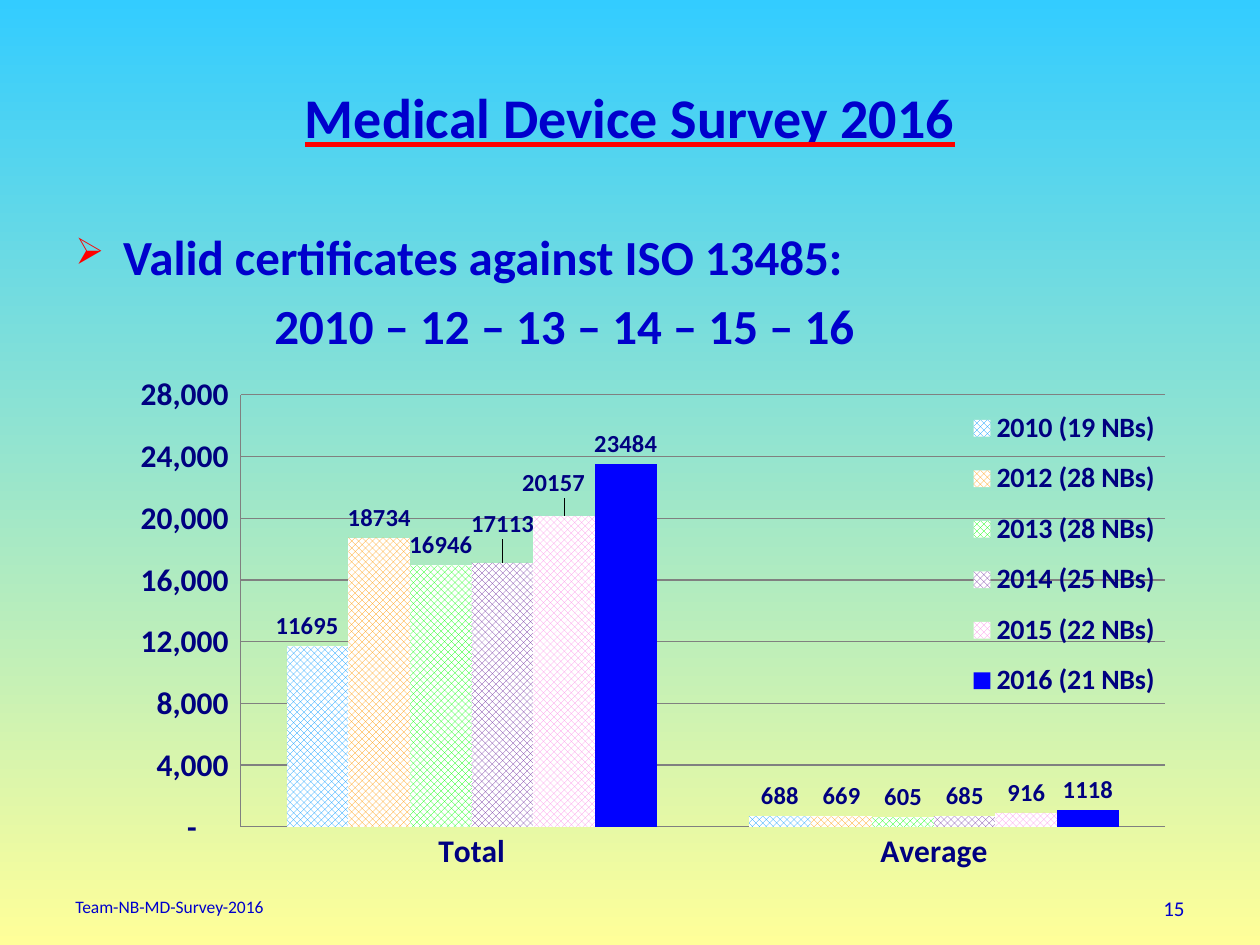
from lxml import etree
from pptx import Presentation
from pptx.chart.data import CategoryChartData as ChartData
from pptx.dml.color import RGBColor as Rgb
from pptx.enum.chart import XL_CHART_TYPE as Kind, XL_LABEL_POSITION as Spot
from pptx.enum.chart import XL_LEGEND_POSITION as Side, XL_TICK_MARK as Tick
from pptx.enum.dml import MSO_PATTERN as Pattern
from pptx.enum.text import MSO_ANCHOR as Anchor, PP_ALIGN as Align
from pptx.oxml import parse_xml
from pptx.oxml.ns import nsdecls, qn
from pptx.util import Inches, Pt

COLORS = {
    "sky": "33CCFF", "sand": "FFFF99", "text": "0000CC", "red": "FF0000",
    "navy": "000080", "white": "FFFFFF", "grid": "808080", "solid": "0101FF",
}
FACE = "Calibri"
SERIES = [
    ("2010 (19 NBs)", (11695, 688), "0099FF"),
    ("2012 (28 NBs)", (18734, 669), "FF9900"),
    ("2013 (28 NBs)", (16946, 605), "00FF00"),
    ("2014 (25 NBs)", (17113, 685), "7030A0"),
    ("2015 (22 NBs)", (20157, 916), "FD91E8"),
    ("2016 (21 NBs)", (23484, 1118), None),
]
SHIFTS = {0: (-0.01, 0), 3: (0, -0.03), 4: (-0.01, -0.02)}


def rgb(name):
    return Rgb.from_string(COLORS.get(name, name))


def style(font, size, color, bold=False):
    font.name = FACE
    font.size = Pt(size)
    font.bold = bold
    font.color.rgb = rgb(color)


def add_box(slide, left, top, width, height):
    box = slide.shapes.add_textbox(*map(Inches, (left, top, width, height)))
    box.text_frame.word_wrap = True
    return box.text_frame


def add_run(para, text, size, bold=False):
    run = para.add_run()
    run.text = text
    style(run.font, size, "text", bold)
    return run


def set_back(slide):
    fill = slide.background.fill
    fill.gradient()
    fill.gradient_angle = 270
    for stop, name in zip(fill.gradient_stops, ("sky", "sand")):
        stop.color.rgb = rgb(name)


def add_title(slide):
    frame = add_box(slide, 0.5, 0.3, 9, 1.25)
    frame.vertical_anchor = Anchor.MIDDLE
    para = frame.paragraphs[0]
    para.alignment = Align.CENTER
    run = add_run(para, "Medical Device Survey 2016", 32, True)
    run.font.underline = True
    line = parse_xml(
        f'<a:uFill {nsdecls("a")}><a:solidFill>'
        f'<a:srgbClr val="{COLORS["red"]}"/></a:solidFill></a:uFill>')
    run.font._element.find(qn("a:latin")).addprevious(line)


def add_bullet(para):
    props = para._p.get_or_add_pPr()
    props.set("marL", str(Inches(0.38)))
    props.set("indent", str(Inches(-0.38)))
    color = etree.SubElement(props, qn("a:buClr"))
    etree.SubElement(color, qn("a:srgbClr"), val=COLORS["red"])
    etree.SubElement(props, qn("a:buSzPct"), val="75000")
    etree.SubElement(props, qn("a:buChar"), char="➢")


def add_body(slide):
    frame = add_box(slide, 0.5, 1.75, 9, 1.16)
    head = frame.paragraphs[0]
    add_bullet(head)
    add_run(head, "Valid certificates against ISO 13485:", 28, True)
    years = frame.add_paragraph()
    years._p.get_or_add_pPr().set("marL", str(Inches(1.58)))
    years.space_before = Pt(5.6)
    add_run(years, "2010 – 12 – 13 – 14 – 15 – 16", 28, True)


def add_note(slide, text, left, width, size, align):
    para = add_box(slide, left, 7.06, width, 0.29).paragraphs[0]
    para.alignment = align
    add_run(para, text, size)


def make_layout(x, y, w=None, h=None, inner=False):
    parts = ['<c:layoutTarget val="inner"/>'] if inner else []
    if w:
        parts += ['<c:xMode val="edge"/>', '<c:yMode val="edge"/>']
    sizes = (("x", x), ("y", y), ("w", w), ("h", h))
    parts += [f'<c:{key} val="{val}"/>' for key, val in sizes if val is not None]
    return parse_xml(
        f'<c:layout {nsdecls("c")}><c:manualLayout>{"".join(parts)}'
        '</c:manualLayout></c:layout>')


def place(parent, layout, index):
    for old in parent.findall(qn("c:layout")):
        parent.remove(old)
    parent.insert(index, layout)


def style_axis(axis):
    axis.major_tick_mark = axis.minor_tick_mark = Tick.NONE
    axis.format.line.color.rgb = rgb("grid")
    style(axis.tick_labels.font, 18, "navy", True)


def style_bars(bars, color):
    fill = bars.format.fill
    if color:
        fill.patterned()
        fill.pattern = Pattern.LARGE_CHECKER_BOARD
        fill.fore_color.rgb = rgb(color)
        fill.back_color.rgb = rgb("white")
    else:
        fill.solid()
        fill.fore_color.rgb = rgb("solid")
    bars.invert_if_negative = False
    labels = bars.data_labels
    labels.show_value = True
    labels.position = Spot.OUTSIDE_END
    labels.number_format = "0"
    labels.number_format_is_linked = False
    style(labels.font, 14, "navy", True)


def shift_label(bars, x, y):
    label = bars.points[0].data_label
    label.position = Spot.OUTSIDE_END
    style(label.font, 14, "navy", True)
    place(bars.data_labels._element.find(qn("c:dLbl")), make_layout(x, y), 1)


def add_chart(slide):
    data = ChartData(number_format="0")
    data.categories = ["Total", "Average"]
    for name, vals, _ in SERIES:
        data.add_series(name, vals)
    area = map(Inches, (1.06, 2.09, 8.44, 4.97))
    chart = slide.shapes.add_chart(Kind.COLUMN_CLUSTERED, *area, data).chart
    chart.has_title = False
    chart.font.name = "Arial"
    chart.font.size = Pt(10)
    style_axis(chart.category_axis)
    axis = chart.value_axis
    style_axis(axis)
    axis.minimum_scale, axis.maximum_scale, axis.major_unit = 0, 28000, 4000
    axis.major_gridlines.format.line.color.rgb = rgb("grid")
    axis.tick_labels.number_format = (
        '_(* #,##0_);_(* (#,##0);_(* "-"??_);_(@_)')
    axis.tick_labels.number_format_is_linked = False
    plot = chart.plots[0]
    plot.gap_width = 150
    plot.overlap = 0
    plot.vary_by_categories = False
    for bars, (_, _, color) in zip(plot.series, SERIES):
        style_bars(bars, color)
    for index, shift in SHIFTS.items():
        shift_label(plot.series[index], *shift)
    chart.has_legend = True
    legend = chart.legend
    legend.position = Side.RIGHT
    legend.include_in_layout = False
    style(legend.font, 16, "navy", True)
    place(legend._element, make_layout(0.78, 0.21, 0.19, 0.51), 1)
    space = chart._chartSpace.chart.plotArea
    place(space, make_layout(0.1, 0.21, 0.87, 0.69, True), 0)


def main():
    deck = Presentation()
    deck.slide_width, deck.slide_height = Inches(10), Inches(7.5)
    slide = deck.slides.add_slide(deck.slide_layouts[6])
    set_back(slide)
    add_title(slide)
    add_note(slide, "15", 7.17, 2.33, 12, Align.RIGHT)
    add_body(slide)
    add_note(slide, "Team-NB-MD-Survey-2016", 0.5, 3.17, 10, Align.LEFT)
    add_chart(slide)
    deck.save("out.pptx")


if __name__ == "__main__":
    main()
